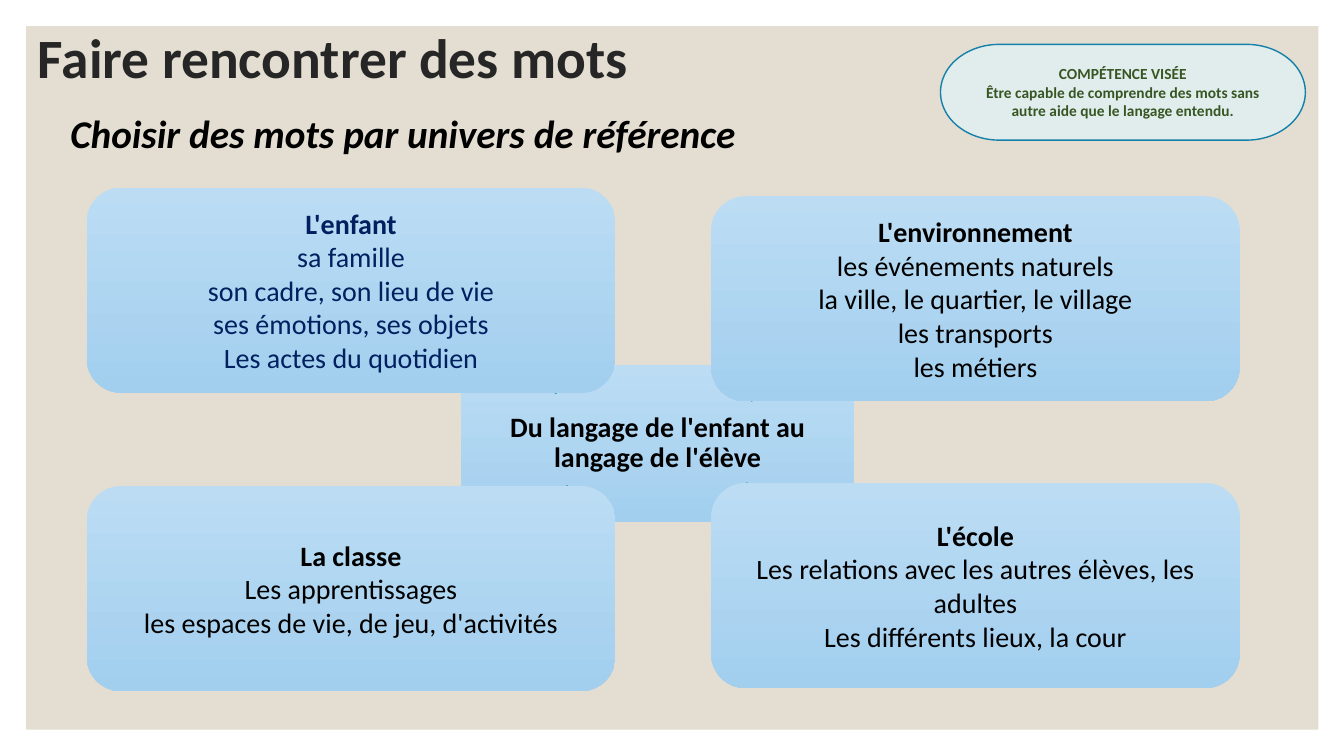
from dataclasses import dataclass

from lxml import etree
from pptx import Presentation
from pptx import util as u
from pptx.dml.color import RGBColor
from pptx.enum import shapes, text
from pptx.oxml.ns import qn


@dataclass(frozen=True)
class Theme:
    font: str = "Calibri"
    background: str = "E3DED1"
    title: str = "262626"
    body: str = "000000"
    child: str = "002060"
    goal_fill: str = "E0EDEC"
    goal_line: str = "1580A9"
    goal_text: str = "385623"
    card_top: str = "BCDCF4"
    card_bottom: str = "A2CFEE"
    spoke: str = "168BB7"
    title_size: float = 39.6
    subtitle_size: float = 28
    card_size: float = 20
    goal_size: float = 11


@dataclass(frozen=True)
class Box:
    left: float
    top: float
    width: float
    height: float


@dataclass(frozen=True)
class Universe:
    left: float
    top: float
    lines: tuple[str, ...]
    spoke: tuple[float, float, float, float]
    color: str


THEME = Theme()
CARD_WIDTH, CARD_HEIGHT = 377.5, 146.5
LEFT_COLUMN, RIGHT_COLUMN = 62, 508
HUB = Box(329, 260.5, 281.5, 112.5)

UNIVERSES = (
    Universe(LEFT_COLUMN, 134,
             ("L'enfant", "sa famille", "son cadre, son lieu de vie",
              "ses émotions, ses objets", "Les actes du quotidien"),
             (357, 260.5, 397.5, 281), THEME.child),
    Universe(RIGHT_COLUMN, 140.2,
             ("L'environnement", "les événements naturels",
              "la ville, le quartier, le village", "les transports", "les métiers"),
             (593.5, 260.5, 536.5, 286.5), THEME.body),
    Universe(LEFT_COLUMN, 347.2,
             ("La classe", "Les apprentissages",
              "les espaces de vie, de jeu, d'activités"),
             (350.5, 373, 405.5, 347), THEME.body),
    Universe(RIGHT_COLUMN, 345,
             ("L'école", "Les relations avec les autres élèves, les adultes",
              "Les différents lieux, la cour"),
             (596, 373, 533, 345), THEME.body),
)


def rgb(color: str) -> RGBColor:
    return RGBColor.from_string(color)


def points(box: Box) -> tuple[u.Pt, ...]:
    return tuple(u.Pt(value) for value in (box.left, box.top, box.width, box.height))


def write(shape, lines: tuple[str, ...], size: float, color: str, *,
          align=text.PP_ALIGN.CENTER, anchor=text.MSO_ANCHOR.MIDDLE,
          bold_lines: int = 1, italic: bool = False, spacing: float = 1.0) -> None:
    frame = shape.text_frame
    frame.word_wrap = True
    frame.vertical_anchor = anchor
    frame.text = "\n".join(lines)
    for index, paragraph in enumerate(frame.paragraphs):
        paragraph.alignment = align
        paragraph.line_spacing = spacing
        font = paragraph.font
        font.name, font.size = THEME.font, u.Pt(size)
        font.bold, font.italic = index < bold_lines, italic
        font.color.rgb = rgb(color)


def add_shape(slide, kind, box: Box, fill: str | None = None):
    shape = slide.shapes.add_shape(kind, *points(box))
    shape.shadow.inherit = False
    shape.line.fill.background()
    if fill:
        shape.fill.solid()
        shape.fill.fore_color.rgb = rgb(fill)
    return shape


def add_card(slide, box: Box, lines: tuple[str, ...], color: str,
             spacing: float = 1.0) -> None:
    card = add_shape(slide, shapes.MSO_SHAPE.ROUNDED_RECTANGLE, box)
    card.fill.gradient()
    card.fill.gradient_angle = 270
    for stop, shade in zip(card.fill.gradient_stops,
                           (THEME.card_top, THEME.card_bottom)):
        stop.color.rgb = rgb(shade)
    write(card, lines, THEME.card_size, color, spacing=spacing)


def add_spoke(slide, ends: tuple[float, float, float, float]) -> None:
    spoke = slide.shapes.add_connector(
        shapes.MSO_CONNECTOR.STRAIGHT, *(u.Pt(value) for value in ends))
    spoke.line.color.rgb = rgb(THEME.spoke)
    spoke.line.width = u.Pt(1)
    etree.SubElement(spoke._element.spPr, qn("a:effectLst"))


def add_heading(slide, box: Box, wording: str, size: float, color: str,
                anchor, italic: bool = False, spacing: float = 1.0) -> None:
    heading = slide.shapes.add_textbox(*points(box))
    write(heading, (wording,), size, color, align=text.PP_ALIGN.LEFT,
          anchor=anchor, italic=italic, spacing=spacing)


def main() -> None:
    presentation = Presentation()
    presentation.slide_width, presentation.slide_height = u.Pt(960), u.Pt(540)
    slide = presentation.slides.add_slide(presentation.slide_layouts[6])

    # Background panel and title
    add_shape(slide, shapes.MSO_SHAPE.RECTANGLE,
              Box(18.7, 18.7, 923, 502.5), THEME.background)
    add_heading(slide, Box(20, 20, 568, 46), "Faire rencontrer des mots",
                THEME.title_size, THEME.title, text.MSO_ANCHOR.MIDDLE, spacing=0.9)

    # Targeted skill
    goal = add_shape(slide, shapes.MSO_SHAPE.FLOWCHART_TERMINATOR,
                     Box(671.8, 31.7, 260.6, 68.4), THEME.goal_fill)
    goal.line.color.rgb = rgb(THEME.goal_line)
    goal.line.width = u.Pt(1)
    write(goal, ("COMPÉTENCE VISÉE",
                 "Être capable de comprendre des mots sans autre aide "
                 "que le langage entendu."),
          THEME.goal_size, THEME.goal_text, bold_lines=2)

    # Central idea, then each universe over its spoke
    add_card(slide, HUB, ("Du langage de l'enfant au langage de l'élève",),
             THEME.body, spacing=0.9)
    for universe in UNIVERSES:
        add_spoke(slide, universe.spoke)
        add_card(slide, Box(universe.left, universe.top, CARD_WIDTH, CARD_HEIGHT),
                 universe.lines, universe.color)

    # Subtitle
    add_heading(slide, Box(43.2, 74.2, 568, 41),
                "Choisir des mots par univers de référence",
                THEME.subtitle_size, THEME.body, text.MSO_ANCHOR.TOP, italic=True)

    presentation.save("out.pptx")


if __name__ == "__main__":
    main()
